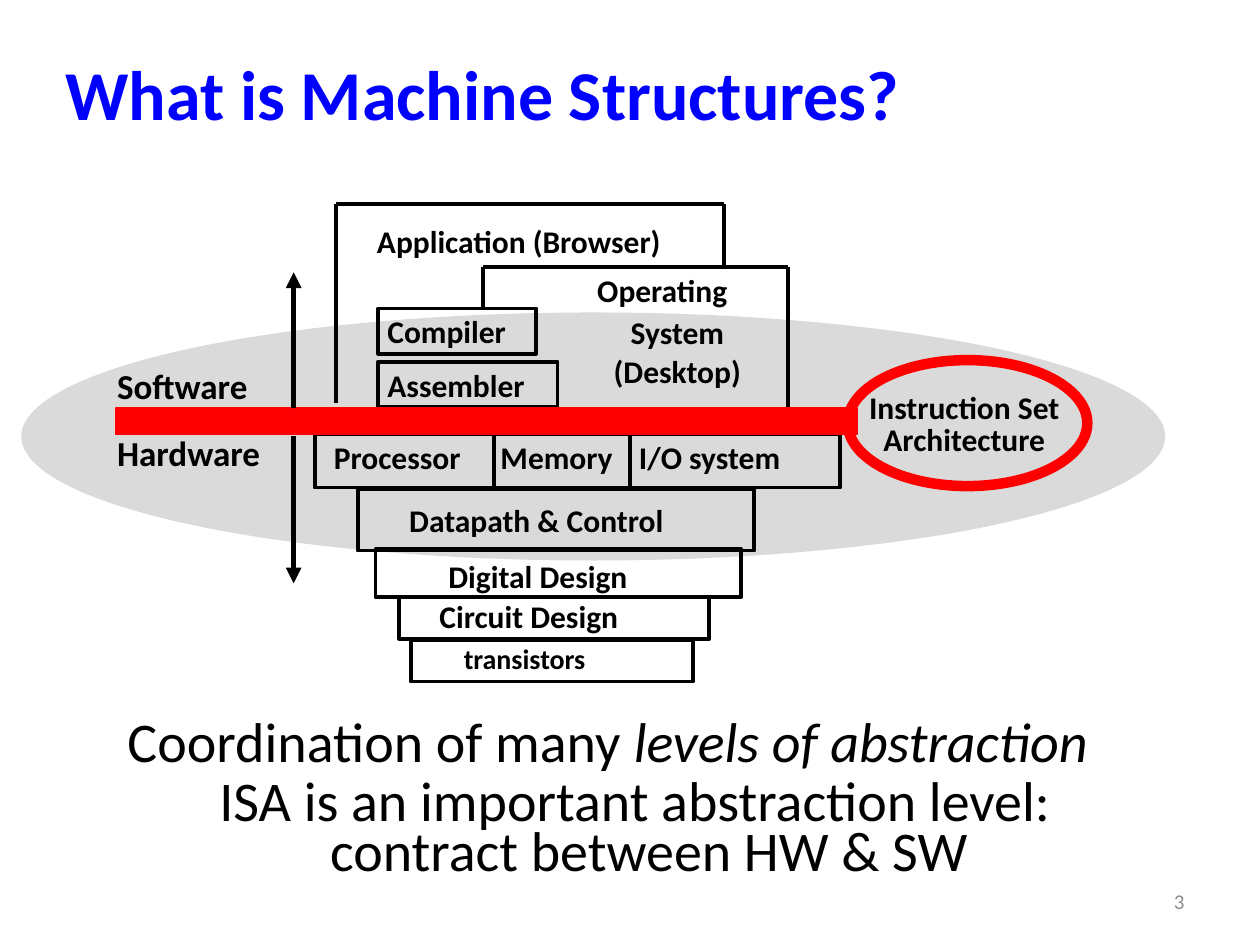
import dataclasses
import itertools

import lxml.etree
import pptx
import pptx.dml.color
import pptx.enum.shapes
import pptx.enum.text
import pptx.oxml.ns
import pptx.util

Cm = pptx.util.Cm
Pt = pptx.util.Pt
Align = pptx.enum.text.PP_ALIGN
Anchor = pptx.enum.text.MSO_ANCHOR
Preset = pptx.enum.shapes.MSO_SHAPE


@dataclasses.dataclass(frozen=True)
class Theme:
    """Colours, type sizes and line widths of the slide."""
    font: str = "Calibri"
    heading: str = "0000FF"
    ink: str = "000000"
    accent: str = "FF0000"
    backdrop: str = "DADADA"
    muted: str = "8C8C8C"
    heading_size: int = 40
    takeaway_size: int = 32
    side_size: int = 20
    label_size: int = 18
    small_size: int = 16
    number_size: int = 12
    outline: float = 2.25
    arrow: float = 3
    ring: float = 6


@dataclasses.dataclass(frozen=True)
class Box:
    """A rectangle in centimetres."""
    left: float
    top: float
    width: float
    height: float

    def inner(self, left, top, width, height):
        """Return a box placed relative to this one."""
        return Box(self.left + left, self.top + top, width, height)

    def lengths(self):
        """Return left, top, width and height as lengths."""
        return [Cm(n) for n in (self.left, self.top, self.width, self.height)]


THEME = Theme()


def rgb(colour):
    """Turn a hex string into a colour."""
    return pptx.dml.color.RGBColor.from_string(colour)


def write(shape, text, size=THEME.label_size, colour=THEME.ink, bold=True,
          align=Align.LEFT, anchor=Anchor.TOP, inset=(0.18, 0.08), spacing=1):
    """Set and format the text of a shape."""
    frame = shape.text_frame
    frame.word_wrap = True
    frame.vertical_anchor = anchor
    frame.margin_left, frame.margin_top = Cm(inset[0]), Cm(inset[1])
    frame.margin_right, frame.margin_bottom = Cm(min(inset[0], 0.25)), Cm(0)
    frame.text = text
    for paragraph in frame.paragraphs:
        paragraph.alignment = align
        paragraph.line_spacing = spacing
        for run in paragraph.runs:
            run.font.name = THEME.font
            run.font.size = Pt(size)
            run.font.bold = bold
            run.font.color.rgb = rgb(colour)
    return frame


def label(slide, box, text, **style):
    """Place free text in a box."""
    return write(slide.shapes.add_textbox(*box.lengths()), text, **style)


def block(slide, box, preset=Preset.RECTANGLE, fill=None, line=None, width=THEME.outline):
    """Place a preset shape with an optional fill and outline."""
    shape = slide.shapes.add_shape(preset, *box.lengths())
    shape.shadow.inherit = False
    if fill:
        shape.fill.solid()
        shape.fill.fore_color.rgb = rgb(fill)
    else:
        shape.fill.background()
    if line:
        shape.line.color.rgb = rgb(line)
        shape.line.width = Pt(width)
    else:
        shape.line.fill.background()
    return shape


def stroke(slide, box, points, width=THEME.outline, arrow=False):
    """Join points, given relative to a box, with straight lines."""
    for (x1, y1), (x2, y2) in itertools.pairwise(points):
        line = slide.shapes.add_connector(
            pptx.enum.shapes.MSO_CONNECTOR.STRAIGHT,
            Cm(box.left + x1), Cm(box.top + y1), Cm(box.left + x2), Cm(box.top + y2))
        line.line.color.rgb = rgb(THEME.ink)
        line.line.width = Pt(width)
        if arrow:
            outline = line.line._get_or_add_ln()
            lxml.etree.SubElement(outline, pptx.oxml.ns.qn("a:tailEnd"), type="triangle")
        lxml.etree.SubElement(line._element.spPr, pptx.oxml.ns.qn("a:effectLst"))


def software_stack(slide, box):
    """Draw the layers above the instruction set."""
    stroke(slide, box, [(0, 4.02), (0, 0), (7.82, 0), (7.82, 1.27)])
    stroke(slide, box, [(2.95, 2.11), (2.95, 1.27), (9.1, 1.27), (9.1, 4.2)])
    label(slide, box.inner(0.64, 0.28, 6.5, 0.91), "Application (Browser)")
    label(slide, box.inner(5.08, 1.27, 3.35, 0.91), "Operating")
    label(slide, box.inner(5.11, 2.11, 3.53, 1.7), "System\n(Desktop)",
          align=Align.CENTER, spacing=1.02)
    for tool, top, width in (("Compiler", 2.11, 3.18), ("Assembler", 3.18, 3.61)):
        write(block(slide, box.inner(0.85, top, width, 0.91), line=THEME.ink), tool)


def hardware_stack(slide, box):
    """Draw the layers below the instruction set."""
    block(slide, box.inner(0, 0, box.width, 1.07), line=THEME.ink)
    for part, left, width in (("Processor", 0.2, 3.4), ("Memory", 3.56, 2.8),
                              ("I/O system", 6.35, 3.6)):
        label(slide, box.inner(left, 0, width, 0.91), part)
    for x in (3.61, 6.35):
        stroke(slide, box, [(x, 0), (x, 1.14)])
    layers = (
        ("Datapath & Control", (0.86, 1.1, 8, 1.24), (1.04, 0.25), THEME.label_size),
        ("Digital Design", (1.22, 2.31, 7.37, 0.97), (1.47, 0.15), THEME.label_size),
        ("Circuit Design", (1.7, 3.28, 6.25, 0.84), (0.81, 0), THEME.label_size),
        ("transistors", (1.93, 4.14, 5.69, 0.84), (1.07, 0.03), THEME.small_size),
    )
    for layer, place, inset, size in layers:
        write(block(slide, box.inner(*place), line=THEME.ink), layer, size=size, inset=inset)


def boundary(slide, box):
    """Draw the bar between software and hardware with its side labels and arrows."""
    block(slide, box, fill=THEME.accent, line=THEME.accent, width=1)
    for side, top in (("Software", -1.02), ("Hardware", 0.33)):
        label(slide, box.inner(-0.23, top, 3.75, 1.09), side,
              size=THEME.side_size, inset=(0.25, 0.13))
    for start, end in ((0, -2.74), (0.56, 3.53)):
        stroke(slide, box, [(3.58, start), (3.58, end)], THEME.arrow, arrow=True)


def instruction_set(slide, box):
    """Draw the ringed name of the interface."""
    label(slide, box.inner(0.23, 0.59, 4.24, 1.47), "Instruction Set\nArchitecture",
          align=Align.CENTER, spacing=0.85)
    block(slide, box, Preset.OVAL, line=THEME.accent, width=THEME.ring)


def takeaways(slide, box):
    """Write the two closing statements."""
    style = dict(size=THEME.takeaway_size, bold=False, spacing=0.75)
    opening = label(slide, box.inner(1.55, 0, 20.22, 1.22),
                    "Coordination of many ", **style).paragraphs[0]
    emphasis = opening.add_run()
    emphasis.text = "levels of abstraction"
    emphasis.font.name = THEME.font
    emphasis.font.size = Pt(THEME.takeaway_size)
    emphasis.font.color.rgb = rgb(THEME.ink)
    emphasis.font.italic = True
    contract = label(slide, box.inner(0, 1.19, box.width, 2.26),
                     "ISA is an important abstraction level:\vcontract between HW & SW",
                     align=Align.CENTER, **style).paragraphs[0]
    indent = Cm(0.56)
    properties = contract._p.get_or_add_pPr()
    properties.set("marL", str(indent))
    properties.set("indent", str(-indent))


def main():
    """Build and save the slide."""
    deck = pptx.Presentation()
    deck.slide_width, deck.slide_height = Cm(25.4), Cm(19.05)
    slide = deck.slides.add_slide(deck.slide_layouts[6])
    label(slide, Box(1.07, 0.64, 22.86, 2.46), "What is Machine Structures?",
          size=THEME.heading_size, colour=THEME.heading, anchor=Anchor.MIDDLE, inset=(0.25, 0))
    block(slide, Box(0.43, 6.3, 23.06, 5), Preset.OVAL, fill=THEME.backdrop)
    software_stack(slide, Box(6.78, 4.11, 9.1, 4.2))
    hardware_stack(slide, Box(6.35, 8.76, 10.59, 4.98))
    boundary(slide, Box(2.34, 8.23, 14.94, 0.53))
    instruction_set(slide, Box(17.09, 7.26, 4.83, 2.54))
    takeaways(slide, Box(0.84, 14.48, 23.93, 3.45))
    label(slide, Box(18.21, 17.65, 5.92, 1.02), "3", size=THEME.number_size, bold=False,
          colour=THEME.muted, align=Align.RIGHT, anchor=Anchor.MIDDLE, inset=(0.25, 0))
    deck.save("out.pptx")


if __name__ == "__main__":
    main()
